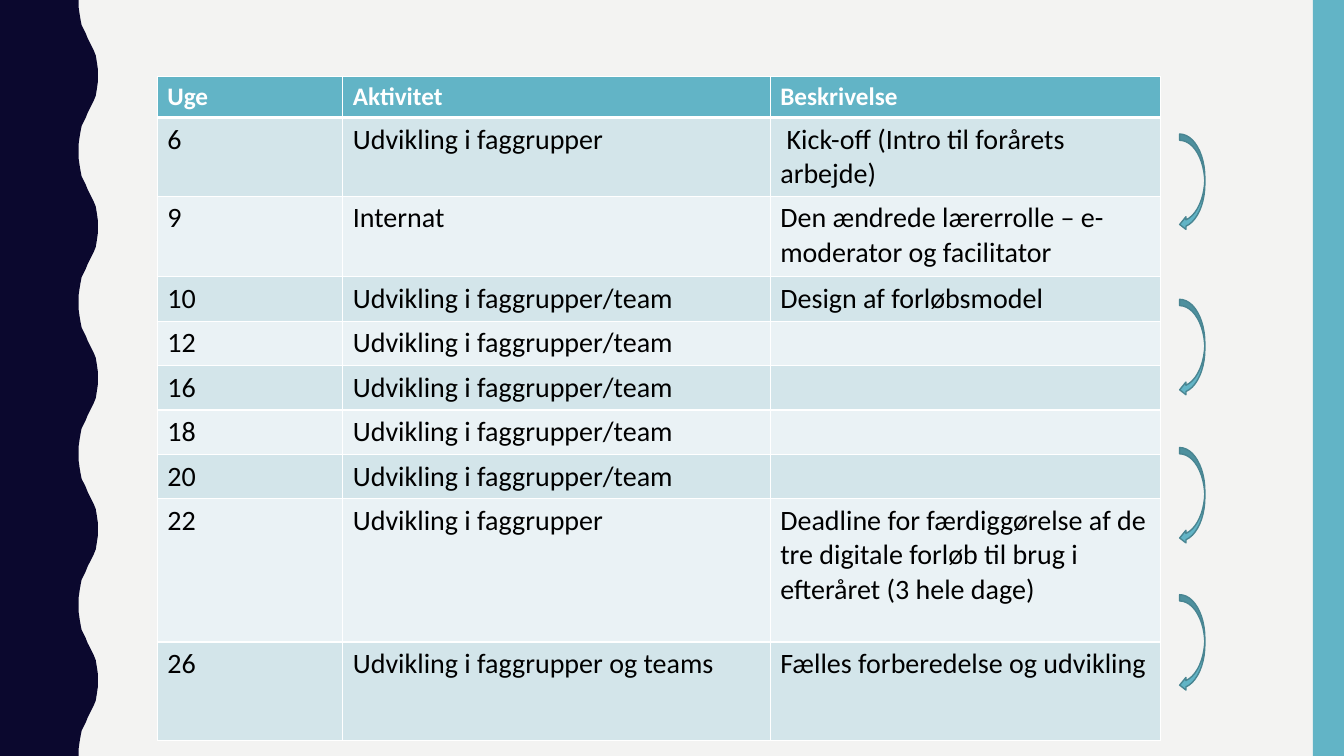
"""Build a slide with a weekly plan of development activities."""
from typing import NamedTuple

from lxml import etree
from pptx import Presentation
from pptx.dml.color import RGBColor
from pptx.enum.shapes import MSO_SHAPE
from pptx.oxml.ns import qn
from pptx.util import Inches, Pt

RECTANGLE = MSO_SHAPE.RECTANGLE
CURVED_ARROW = MSO_SHAPE.CURVED_LEFT_ARROW

WIDTH, HEIGHT = 13.33, 7.5
PAPER, NAVY, TEAL, TEAL_EDGE = "F3F3F2", "0B082E", "62B4C6", "498592"
DARK_BAND, LIGHT_BAND, WHITE, BLACK = "D3E5EA", "EAF2F5", "FFFFFF", "000000"
FONT = "Calibri"

COLUMN_WIDTHS = (1.84, 4.24, 3.87)
HEADINGS = ("Uge", "Aktivitet", "Beskrivelse")
TEAM_WORK = "Udvikling i faggrupper/team"
WAVE_PERIOD = 1.5
HALF_WAVE = (
    (0.78, 0), (0.78, 0.07), (0.79, 0.14), (0.8, 0.2), (0.81, 0.25),
    (0.83, 0.29), (0.85, 0.33), (0.87, 0.38), (0.89, 0.42), (0.91, 0.46),
    (0.93, 0.5), (0.95, 0.55), (0.96, 0.61), (0.97, 0.68), (0.97, 0.75),
)


class Activity(NamedTuple):
    """One week of the plan."""

    week: str
    name: str
    description: str = ""
    height: float = 0.39


class Block(NamedTuple):
    """A preset shape with its place and colours."""

    preset: MSO_SHAPE
    left: float
    top: float
    width: float
    height: float
    line: str = ""


ACTIVITIES = (
    Activity("6", "Udvikling i faggrupper", " Kick-off (Intro til forårets arbejde)", 0.69),
    Activity("9", "Internat", "Den ændrede lærerrolle – e-moderator og facilitator", 0.8),
    Activity("10", TEAM_WORK, "Design af forløbsmodel"),
    Activity("12", TEAM_WORK),
    Activity("16", TEAM_WORK),
    Activity("18", TEAM_WORK),
    Activity("20", TEAM_WORK),
    Activity(
        "22",
        "Udvikling i faggrupper",
        "Deadline for færdiggørelse af de tre digitale forløb til brug i efteråret (3 hele dage)",
        1.42,
    ),
    Activity("26", "Udvikling i faggrupper og teams", "Fælles forberedelse og udvikling", 0.98),
)
SIDE_BAR = Block(RECTANGLE, 13.02, 0, 0.31, HEIGHT)
ARROWS = tuple(
    Block(CURVED_ARROW, 11.7, top, 0.25, 0.96, TEAL_EDGE) for top in (1.33, 2.97, 4.44, 5.9)
)


def paint(fill, colour: str) -> None:
    """Give a fill one solid colour."""
    fill.solid()
    fill.fore_color.rgb = RGBColor.from_string(colour)


def draw_wave(page) -> None:
    """Draw the dark left edge with its wavy side."""
    down = HALF_WAVE[1:]
    back = [(x, WAVE_PERIOD - y) for x, y in reversed(HALF_WAVE[:-1])]
    points = [HALF_WAVE[0]]
    for period in range(round(HEIGHT / WAVE_PERIOD)):
        points += [(x, y + period * WAVE_PERIOD) for x, y in (*down, *back)]
    points.append((0, HEIGHT))
    builder = page.shapes.build_freeform(0, 0)
    builder.add_line_segments([(Inches(x), Inches(y)) for x, y in points], close=True)
    wave = builder.convert_to_shape()
    wave.shadow.inherit = False
    paint(wave.fill, NAVY)
    wave.line.fill.background()


def draw_block(page, block: Block) -> None:
    """Draw a teal preset shape."""
    place = (Inches(length) for length in block[1:5])
    shape = page.shapes.add_shape(block.preset, *place)
    shape.shadow.inherit = False
    paint(shape.fill, TEAL)
    if block.line:
        paint(shape.line.fill, block.line)
        shape.line.width = Pt(1)
    else:
        shape.line.fill.background()


def add_borders(cell, bottom: float) -> None:
    """Put white lines around a cell."""
    properties = cell._tc.get_or_add_tcPr()
    for side, points in (("L", 1), ("R", 1), ("T", 1), ("B", bottom)):
        line = etree.SubElement(properties, qn(f"a:ln{side}"), w=str(Pt(points)))
        solid = etree.SubElement(line, qn("a:solidFill"))
        etree.SubElement(solid, qn("a:srgbClr"), val=WHITE)


def fill_cell(cell, text: str, colour: str, heading: bool) -> None:
    """Format a cell and write its text."""
    add_borders(cell, 3 if heading else 1)
    paint(cell.fill, colour)
    if text:
        span = cell.text_frame.paragraphs[0].add_run()
        span.text = text
        span.font.name = FONT
        span.font.size = Pt(18 if heading else 20)
        span.font.bold = heading
        paint(span.font.fill, WHITE if heading else BLACK)


def draw_plan(page) -> None:
    """Draw the table of weeks and activities."""
    rows = (Activity(*HEADINGS), *ACTIVITIES)
    frame = page.shapes.add_table(
        len(rows), len(COLUMN_WIDTHS), Inches(1.56), Inches(0.76),
        Inches(sum(COLUMN_WIDTHS)), Inches(sum(row.height for row in rows)),
    )
    table = frame.table
    for column, width in zip(table.columns, COLUMN_WIDTHS):
        column.width = Inches(width)
    for index, activity in enumerate(rows):
        heading = index == 0
        band = DARK_BAND if index % 2 else LIGHT_BAND
        table.rows[index].height = Inches(activity.height)
        for cell, text in zip(table.rows[index].cells, activity[:3]):
            fill_cell(cell, text, TEAL if heading else band, heading)


def main() -> None:
    """Build and save the deck."""
    deck = Presentation()
    deck.slide_width, deck.slide_height = Inches(WIDTH), Inches(HEIGHT)
    page = deck.slides.add_slide(deck.slide_layouts.get_by_name("Blank"))
    paint(page.background.fill, PAPER)
    draw_wave(page)
    draw_block(page, SIDE_BAR)
    draw_plan(page)
    for arrow in ARROWS:
        draw_block(page, arrow)
    deck.save("out.pptx")


if __name__ == "__main__":
    main()
